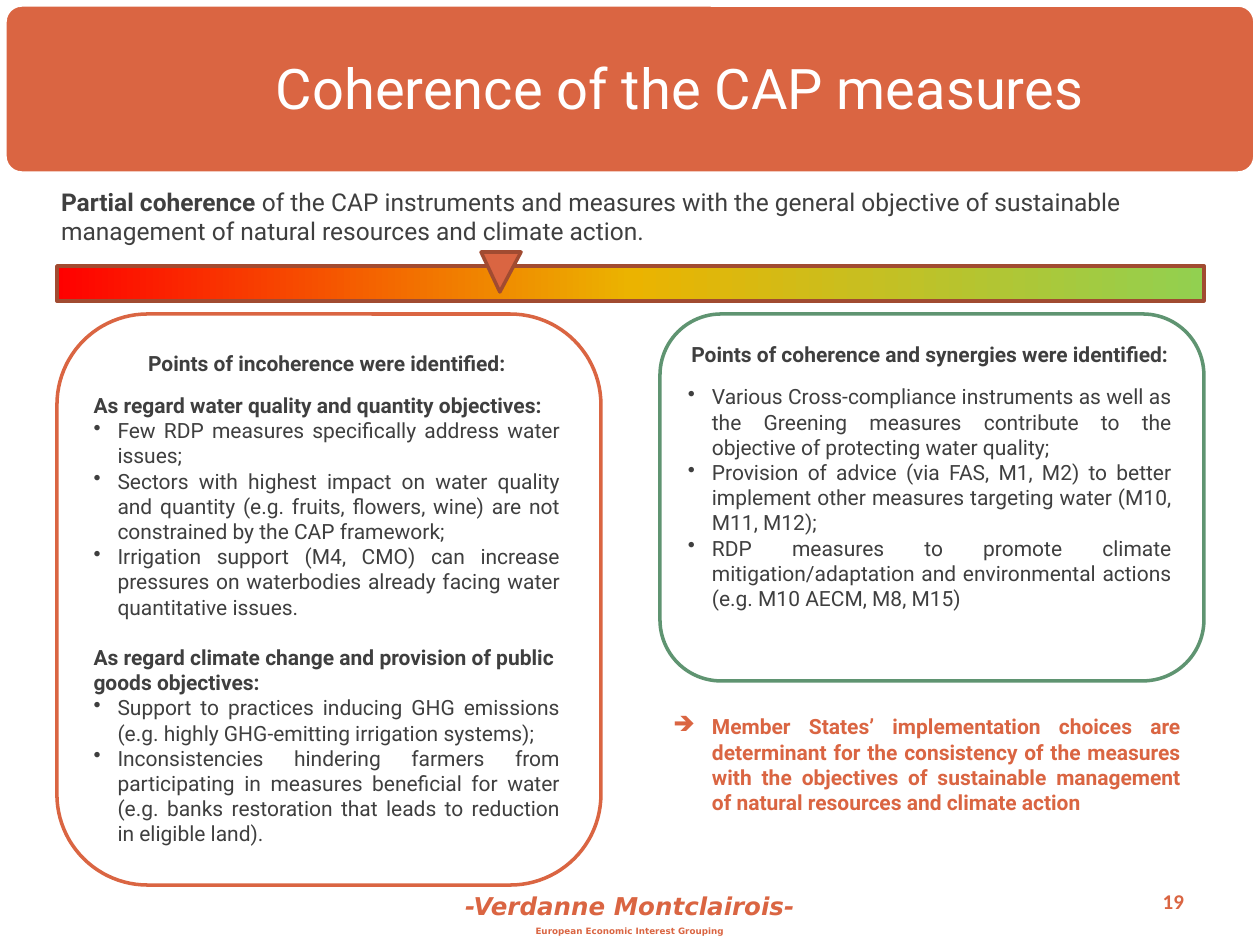
"""Build the slide on the coherence of the CAP measures."""
from copy import deepcopy
from dataclasses import dataclass

from lxml import etree
from pptx import Presentation
from pptx import util as u
from pptx.dml.color import RGBColor
from pptx.enum import shapes, text
from pptx.oxml.ns import qn

LEFT, CENTER = text.PP_ALIGN.LEFT, text.PP_ALIGN.CENTER
RIGHT, JUSTIFY = text.PP_ALIGN.RIGHT, text.PP_ALIGN.JUSTIFY
TOP, MIDDLE = text.MSO_ANCHOR.TOP, text.MSO_ANCHOR.MIDDLE


@dataclass(frozen=True)
class Theme:
    """Colours, fonts and type sizes of the slide."""
    accent: str = "DA6542"
    edge: str = "A14B31"
    green: str = "5F9471"
    ink: str = "3F3F3F"
    white: str = "FFFFFF"
    scale: tuple = ("FF0000", "EBB300", "92D050")
    font: str = "Roboto"
    brand_font: str = "DejaVu Sans"
    number_font: str = "Calibri"
    title: int = 32
    lead: int = 14
    body: int = 12
    small: int = 5
    line: int = 2


class SlideBuilder:
    """Draw styled elements on one slide, measured in px."""

    def __init__(self, slide, theme):
        self.slide = slide
        self.theme = theme

    def px(self, *lengths):
        """Turn px into EMU at 126 px to the inch."""
        return [u.Emu(round(length * 914400 / 126)) for length in lengths]

    def frame(self, shape, insets=(13, 6, 13, 6), anchor=TOP):
        """Prepare the text frame of a shape."""
        frame = shape.text_frame
        frame.word_wrap = True
        frame.auto_size = text.MSO_AUTO_SIZE.NONE
        frame.vertical_anchor = anchor
        (frame.margin_left, frame.margin_top,
         frame.margin_right, frame.margin_bottom) = self.px(*insets)
        return shape

    def shape(self, kind, at, fill, line, adjust=None):
        """Add a preset shape with a fill and an outline."""
        shape = self.slide.shapes.add_shape(kind, *self.px(*at))
        shape.shadow.inherit = False
        shape.fill.solid()
        shape.fill.fore_color.rgb = RGBColor.from_string(fill)
        shape.line.color.rgb = RGBColor.from_string(line)
        shape.line.width = u.Pt(self.theme.line)
        if adjust is not None:
            shape.adjustments[0] = adjust
        return shape

    def gradient_bar(self, at, colors, line):
        """Add a rectangle filled from left to right with even colour stops."""
        bar = self.shape(shapes.MSO_SHAPE.RECTANGLE, at, colors[0], line)
        bar.fill.gradient()
        bar.fill.gradient_angle = 0
        stops = bar._element.spPr.find(".//" + qn("a:gsLst"))
        while len(stops) < len(colors):
            stops.append(deepcopy(stops[0]))
        for index, (stop, color) in enumerate(zip(bar.fill.gradient_stops, colors)):
            stop.position = index / (len(colors) - 1)
            stop.color.rgb = RGBColor.from_string(color)

    def text_box(self, at, **options):
        """Add a wrapping text box."""
        return self.frame(self.slide.shapes.add_textbox(*self.px(*at)), **options)

    def title(self, at, words):
        """Place the title placeholder on top of the banner."""
        title = self.slide.shapes.title
        title._element.getparent().append(title._element)
        title.left, title.top, title.width, title.height = self.px(*at)
        self.frame(title, (9, 9, 9, 9), MIDDLE)
        para = self.para(title)
        para.line_spacing = 0.9
        self.span(para, words, self.theme.title, self.theme.white)

    def para(self, box, align=LEFT, before=0, after=0):
        """Start a paragraph, using the empty first one if it is free."""
        frame = box.text_frame
        first = frame.paragraphs[0]
        para = frame.add_paragraph() if first.runs else first
        para.alignment = align
        para.space_before, para.space_after = u.Pt(before), u.Pt(after)
        return para

    def span(self, para, words, size, color, bold=False, italic=False, font=None):
        """Add one run of text to a paragraph."""
        span = para.add_run()
        span.text = words
        span.font.name = font or self.theme.font
        span.font.size = u.Pt(size)
        span.font.bold, span.font.italic = bold, italic
        span.font.color.rgb = RGBColor.from_string(color)

    def bullet(self, box, words, color, mark="•", indent=24, bold=False):
        """Add a justified paragraph with a hanging bullet."""
        para = self.para(box, JUSTIFY)
        self.span(para, words, self.theme.body, color, bold)
        properties = para._p.get_or_add_pPr()
        hang = self.px(indent)[0]
        properties.set("marL", str(hang))
        properties.set("indent", str(-hang))
        tint = etree.SubElement(properties, qn("a:buClr"))
        etree.SubElement(tint, qn("a:srgbClr"), val=color)
        etree.SubElement(properties, qn("a:buChar"), char=mark)

    def panel(self, at, line, heading, sections):
        """Add a rounded panel with a heading and sections of bullets."""
        theme = self.theme
        box = self.shape(shapes.MSO_SHAPE.ROUNDED_RECTANGLE, at, theme.white, line)
        self.frame(box, (10, 10, 14, 15))
        para = self.para(box, CENTER, after=9.6)
        self.span(para, heading, theme.body, theme.ink, bold=True)
        for index, (subheading, points) in enumerate(sections):
            if subheading:
                para = self.para(box, before=14.4 if index else 0)
                self.span(para, subheading, theme.body, theme.ink, bold=True)
            for point in points:
                self.bullet(box, point, theme.ink)


COHERENCE = [(None, [
    "Various Cross-compliance instruments as well as the Greening measures "
    "contribute to the objective of protecting water quality;",
    "Provision of advice (via FAS, M1, M2) to better implement other measures "
    "targeting water (M10, M11, M12);",
    "RDP measures to promote climate mitigation/adaptation and environmental "
    "actions (e.g. M10 AECM, M8, M15)",
])]
INCOHERENCE = [
    ("As regard water quality and quantity objectives:", [
        "Few RDP measures specifically address water issues;",
        "Sectors with highest impact on water quality and quantity (e.g. fruits, "
        "flowers, wine) are not constrained by the CAP framework;",
        "Irrigation support (M4, CMO) can increase pressures on waterbodies "
        "already facing water quantitative issues.",
    ]),
    ("As regard climate change and provision of public goods objectives:", [
        "Support to practices inducing GHG emissions (e.g. highly GHG-emitting "
        "irrigation systems);",
        "Inconsistencies hindering farmers from participating in measures "
        "beneficial for water (e.g. banks restoration that leads to reduction "
        "in eligible land).",
    ]),
]


def main():
    """Build and save the deck."""
    theme = Theme()
    deck = Presentation()
    deck.slide_width, deck.slide_height = u.Inches(10), u.Inches(7.5)
    page = SlideBuilder(deck.slides.add_slide(deck.slide_layouts[5]), theme)

    footer = page.text_box((0, 885, 1260, 60))
    brand = {"color": theme.accent, "bold": True, "font": theme.brand_font}
    para = page.para(footer, CENTER, before=3)
    page.span(para, "-Verdanne Montclairois-", theme.lead, italic=True, **brand)
    para = page.para(footer, CENTER, before=3)
    page.span(para, "European Economic Interest Grouping", theme.small, **brand)

    number = page.text_box((903, 876, 294, 50), anchor=MIDDLE)
    page.span(page.para(number, RIGHT), "19", theme.body, theme.accent,
              bold=True, font=theme.number_font)

    page.shape(shapes.MSO_SHAPE.ROUNDED_RECTANGLE, (5, 5, 1250, 168),
               theme.accent, theme.white, adjust=0.1)
    page.title((267, 46, 988, 90), "Coherence of the CAP measures")

    lead = page.para(page.text_box((48, 181, 1130, 72)))
    page.span(lead, "Partial coherence ", theme.lead, theme.ink, bold=True)
    page.span(lead, "of the CAP instruments and measures with the general objective "
              "of sustainable management of natural resources and climate action.",
              theme.lead, theme.ink)

    page.panel((660, 314, 544, 367), theme.green,
               "Points of coherence and synergies were identified:", COHERENCE)
    page.panel((57, 314, 544, 571), theme.accent,
               "Points of incoherence were identified:", INCOHERENCE)

    page.gradient_bar((57, 266, 1147, 35), theme.scale, theme.edge)
    marker = page.shape(shapes.MSO_SHAPE.ISOSCELES_TRIANGLE, (481, 252, 40, 40),
                        theme.accent, theme.edge, adjust=0.53)
    marker.rotation = 180

    conclusion = page.text_box((660, 708, 534, 140))
    page.bullet(conclusion, "Member States’ implementation choices are determinant for "
                "the consistency of the measures with the objectives of sustainable "
                "management of natural resources and climate action",
                theme.accent, mark="➔", indent=39, bold=True)
    deck.save("out.pptx")


if __name__ == "__main__":
    main()
